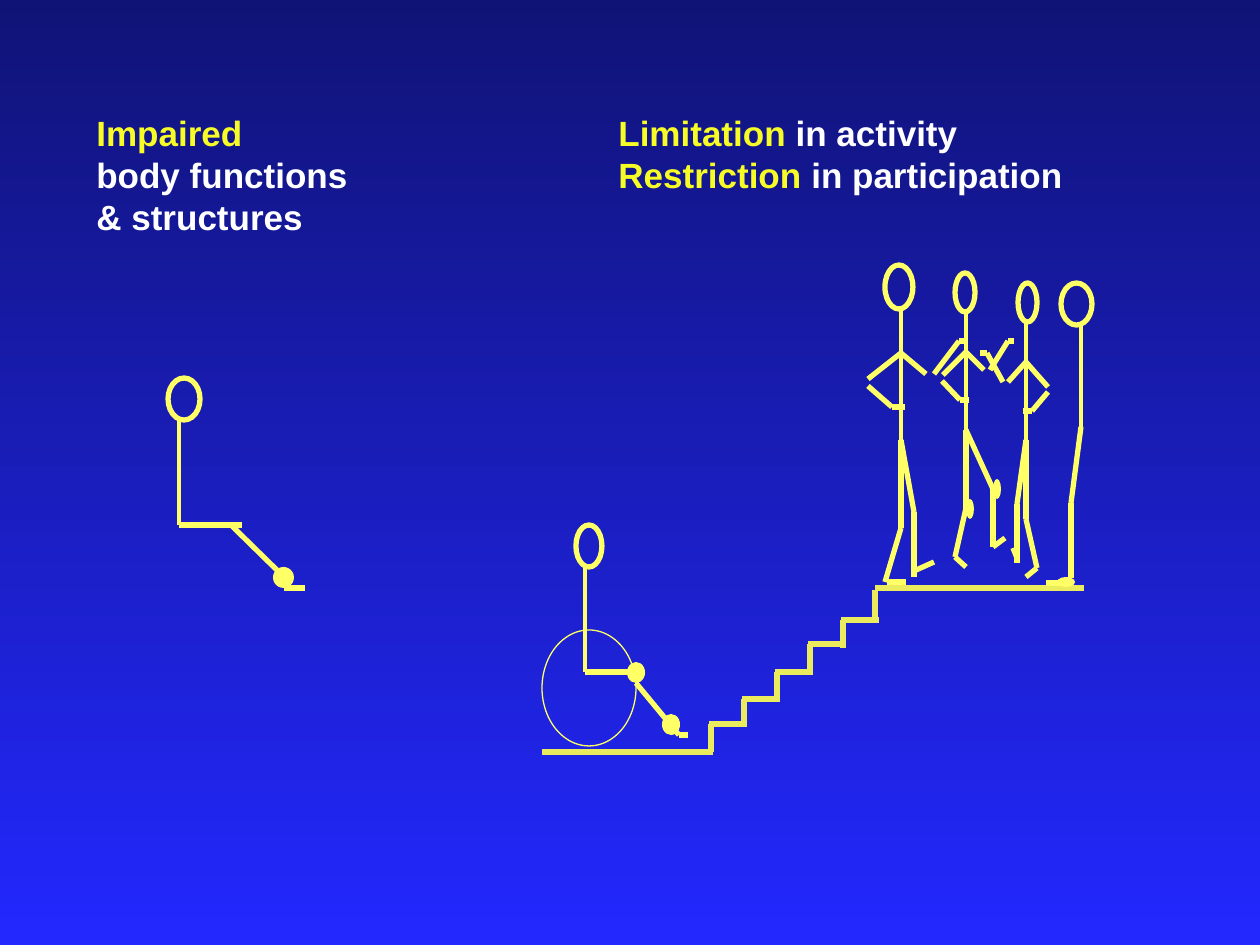
from itertools import pairwise

from pptx import Presentation
from pptx.dml.color import RGBColor
from pptx.enum.shapes import MSO_CONNECTOR, MSO_SHAPE
from pptx.enum.text import MSO_AUTO_SIZE
from pptx.oxml.ns import qn
from pptx.util import Emu, Pt
from lxml import etree

PX_PER_INCH = 126
FIGURE, STAIR = "FFFF66", "EAEC5E"
ACCENT, WHITE = "F7FC26", "FFFFFF"

# Each figure: spine (x, top, bottom), head box, limb paths, joint boxes
FIGURES = [
    # Seated person
    dict(spine=(179, 420, 525), head=(168, 378, 32, 42),
         limbs=[[(179, 525), (242, 525)], [(231, 525), (284, 577)],
                [(284, 588), (305, 588)]],
         joints=[(273, 567, 21, 21)]),
    # Wheelchair user
    dict(spine=(585, 567, 672), head=(576, 525, 26, 42),
         limbs=[[(585, 672), (636, 672)],
                [(636, 683), (679, 735), (688, 735)]],
         joints=[(662, 714, 18, 21), (627, 662, 18, 21)]),
    # Group at the top of the stairs
    dict(spine=(966, 312, 430), head=(955, 273, 20, 39),
         limbs=[[(943, 375), (966, 352), (984, 370)],
                [(942, 381), (960, 400), (969, 400)],
                [(990, 370), (1008, 341), (1014, 341)],
                [(966, 430), (966, 508), (955, 557), (966, 567)],
                [(966, 430), (993, 489), (993, 547), (1005, 538)]],
         joints=[(966, 499, 8, 20), (993, 479, 8, 20)]),
    dict(spine=(1026, 323, 440), head=(1018, 283, 19, 39),
         limbs=[[(1008, 382), (1026, 362), (1048, 387)],
                [(1048, 392), (1032, 411), (1023, 411)],
                [(1003, 382), (987, 353), (980, 353)],
                [(1026, 440), (1026, 519), (1037, 568), (1026, 577)],
                [(1026, 440), (1017, 504), (1017, 563)],
                [(1017, 558), (1013, 548)]],
         joints=[]),
    dict(spine=(901, 309, 440), head=(885, 265, 28, 44),
         limbs=[[(868, 379), (901, 353), (926, 374)],
                [(868, 386), (892, 407), (905, 407)],
                [(934, 374), (959, 341), (968, 341)],
                [(901, 440), (901, 528), (885, 582)],
                [(887, 582), (906, 582)],
                [(901, 440), (914, 512), (914, 577)],
                [(914, 571), (934, 562)]],
         joints=[]),
    dict(spine=(1081, 325, 430), head=(1061, 283, 31, 42),
         limbs=[[(1081, 427), (1071, 503), (1071, 578)],
                [(1066, 583), (1046, 583)]],
         joints=[(1057, 577, 18, 10)]),
]


def px(length):
    return Emu(round(length * 914400 / PX_PER_INCH))


def rgb(value):
    return RGBColor.from_string(value)


def paint_background(slide, top, bottom):
    fill = slide.background.fill
    fill.gradient()
    fill.gradient_angle = 270
    for stop, position, color in zip(fill.gradient_stops, (0, 1), (top, bottom)):
        stop.position = position
        stop.color.rgb = rgb(color)


def add_text(slide, lines, box, *, size=20, font="Arial", bold=True, wrap=True):
    """Add a text box; each line is a list of (text, color) runs."""
    frame = slide.shapes.add_textbox(*map(px, box)).text_frame
    frame.word_wrap = wrap
    frame.auto_size = MSO_AUTO_SIZE.SHAPE_TO_FIT_TEXT
    for number, line in enumerate(lines):
        paragraph = frame.add_paragraph() if number else frame.paragraphs[0]
        for text, color in line:
            run = paragraph.add_run()
            run.text = text
            run.font.size = Pt(size)
            run.font.name = font
            run.font.bold = bold
            run.font.color.rgb = rgb(color)


def add_path(slide, points, color=FIGURE, width=3):
    """Join consecutive points with straight lines."""
    for start, end in pairwise(points):
        line = slide.shapes.add_connector(
            MSO_CONNECTOR.STRAIGHT, *map(px, (*start, *end)))
        line.line.color.rgb = rgb(color)
        line.line.width = Pt(width)
        etree.SubElement(line._element.spPr, qn("a:effectLst"))


def add_oval(slide, box, width=None):
    """Add an outline of the given width, or a filled oval without one."""
    oval = slide.shapes.add_shape(MSO_SHAPE.OVAL, *map(px, box))
    oval.shadow.inherit = False
    if width is None:
        oval.fill.solid()
        oval.fill.fore_color.rgb = rgb(FIGURE)
        oval.line.fill.background()
    else:
        oval.fill.background()
        oval.line.color.rgb = rgb(FIGURE)
        oval.line.width = Pt(width)


def add_stairs(slide):
    first_x, tread, riser = 711, 33, 28
    add_path(slide, [(542, 752), (713, 752)], STAIR)
    for step, y in enumerate((724, 699, 672, 644, 620)):
        x = first_x + step * tread
        add_path(slide, [(x, y), (x, y + riser)], STAIR)
        add_path(slide, [(x - 2, y), (x + 36, y)], STAIR)
    add_path(slide, [(875, 590), (875, 617)], STAIR)
    add_path(slide, [(875, 588), (1084, 588)], STAIR)


def add_figure(slide, spine, head, limbs, joints):
    x, top, bottom = spine
    add_path(slide, [(x, top), (x, bottom)], width=2.25)
    for limb in limbs:
        add_path(slide, limb)
    add_oval(slide, head, width=3)
    for joint in joints:
        add_oval(slide, joint)


def main():
    presentation = Presentation()
    presentation.slide_width, presentation.slide_height = px(1260), px(945)
    slide = presentation.slides.add_slide(presentation.slide_layouts[6])
    paint_background(slide, "101376", "2328FF")

    add_text(slide, [[("Impaired", ACCENT)],
                     [("body functions", WHITE)],
                     [("& structures", WHITE)]],
             (84, 105, 278, 140), wrap=False)
    add_text(slide, [[("Limitation", ACCENT), (" in activity", WHITE)],
                     [("Restriction ", ACCENT), ("in participation", WHITE)]],
             (606, 105, 523, 97))

    add_stairs(slide)
    wheel = (542, 630, 94, 116)
    add_oval(slide, wheel, width=0.75)
    for figure in FIGURES:
        add_figure(slide, **figure)

    presentation.save("out.pptx")


if __name__ == "__main__":
    main()
